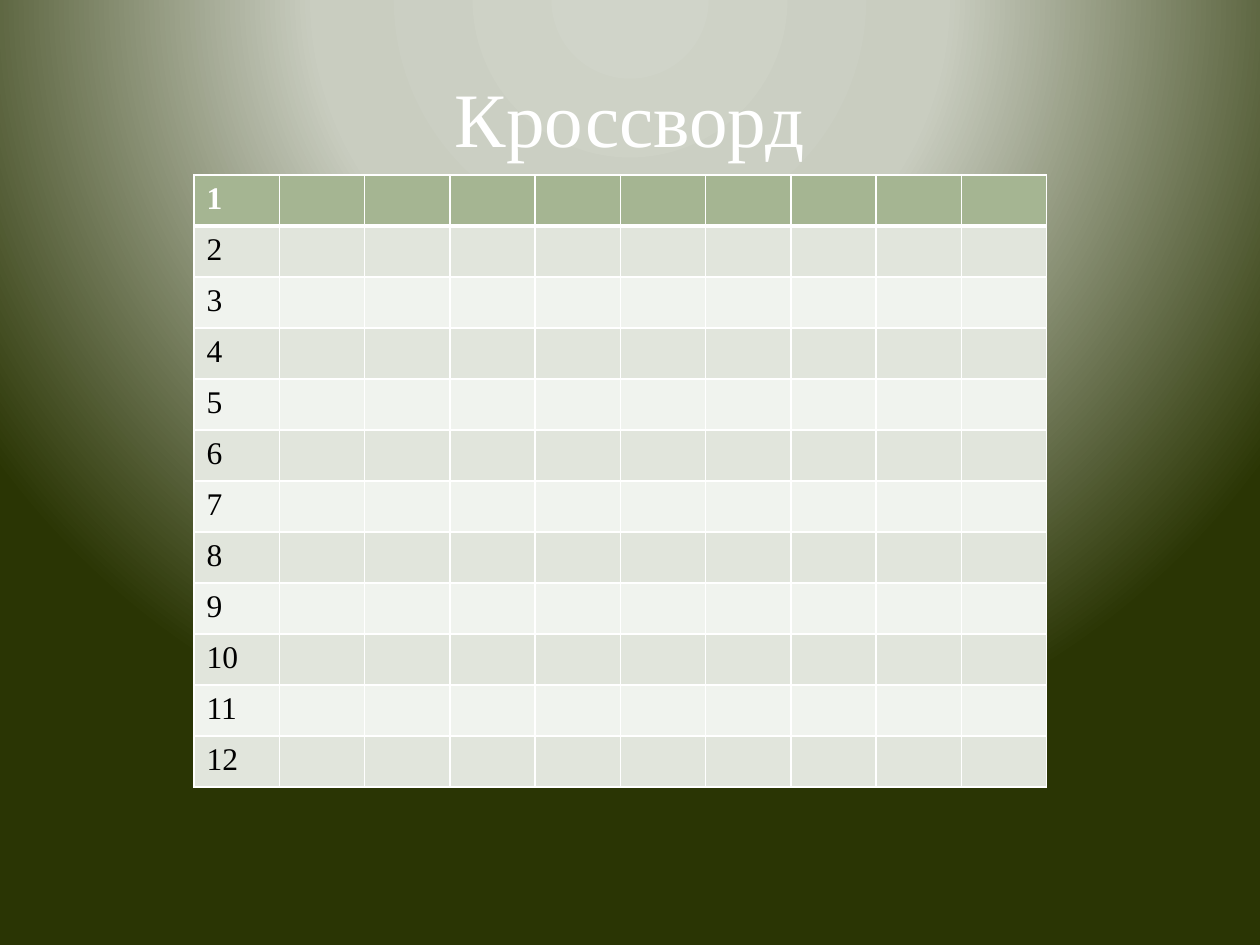
from dataclasses import dataclass

from lxml.etree import SubElement
from pptx import Presentation
from pptx.dml.color import RGBColor as Rgb
from pptx.enum.text import MSO_ANCHOR as Anchor, PP_ALIGN as Align
from pptx.oxml import parse_xml
from pptx.oxml.ns import nsdecls, qn
from pptx.slide import Slide
from pptx.table import _Cell as Cell
from pptx.text.text import _Paragraph as Paragraph
from pptx.util import Emu, Pt

EMU_PER_PX = 914400 / 126


@dataclass(frozen=True)
class Theme:
    font: str = "Times New Roman"
    title_size: int = 44
    cell_size: int = 18
    white: str = "FFFFFF"
    black: str = "000000"
    header: str = "A5B592"
    bands: tuple[str, str] = ("E1E5DC", "F0F3EE")
    backdrop: tuple[tuple[int, str], ...] = (
        (0, "D0D4C9"), (40, "C9CDC0"), (100, "2A3504"))
    thin: int = 1
    thick: int = 3


@dataclass(frozen=True)
class Box:
    left: int
    top: int
    width: int
    height: int

    def emu(self) -> tuple[Emu, ...]:
        return tuple(px(v) for v in (self.left, self.top, self.width, self.height))


@dataclass(frozen=True)
class RowStyle:
    fill: str
    ink: str
    bold: bool
    top: int
    bottom: int


THEME = Theme()
SLIDE = Box(0, 0, 1260, 945)
TITLE = Box(63, 38, 1134, 157)
CROSSWORD = Box(194, 175, 853, 612)
QUESTIONS, LETTERS = 12, 10


def px(value: float) -> Emu:
    return Emu(round(value * EMU_PER_PX))


def paint_backdrop(slide: Slide) -> None:
    """Fill the background with a radial glow centred above the slide."""
    stops = "".join(
        f'<a:gs pos="{pos * 1000}"><a:srgbClr val="{color}"/></a:gs>'
        for pos, color in THEME.backdrop)
    slide.element.cSld.insert(0, parse_xml(
        f'<p:bg {nsdecls("p", "a")}><p:bgPr><a:gradFill rotWithShape="1">'
        f'<a:gsLst>{stops}</a:gsLst><a:path path="circle">'
        '<a:fillToRect l="50000" t="-80000" r="50000" b="180000"/></a:path>'
        '</a:gradFill><a:effectLst/></p:bgPr></p:bg>'))


def add_run(paragraph: Paragraph, text: str, size: int, color: str,
            bold: bool = False) -> None:
    run = paragraph.add_run()
    run.text = text
    run.font.name = THEME.font
    run.font.size = Pt(size)
    run.font.bold = bold
    run.font.color.rgb = Rgb.from_string(color)


def add_title(slide: Slide, text: str) -> None:
    frame = slide.shapes.add_textbox(*TITLE.emu()).text_frame
    frame.word_wrap = True
    frame.vertical_anchor = Anchor.MIDDLE
    heading = frame.paragraphs[0]
    heading.alignment = Align.CENTER
    add_run(heading, text, THEME.title_size, THEME.white)


def row_style(row: int) -> RowStyle:
    if row == 0:
        return RowStyle(THEME.header, THEME.white, True, THEME.thin, THEME.thick)
    top = THEME.thick if row == 1 else THEME.thin
    return RowStyle(THEME.bands[(row - 1) % 2], THEME.black, False, top, THEME.thin)


def style_cell(cell: Cell, style: RowStyle) -> None:
    cell.fill.solid()
    cell.fill.fore_color.rgb = Rgb.from_string(style.fill)
    properties = cell._tc.get_or_add_tcPr()
    edges = {"L": THEME.thin, "R": THEME.thin, "T": style.top, "B": style.bottom}
    # Borders have to stand before the fill in the cell properties.
    for place, (side, width) in enumerate(edges.items()):
        edge = SubElement(properties, qn(f"a:ln{side}"), w=str(Pt(width)))
        ink = SubElement(edge, qn("a:solidFill"))
        SubElement(ink, qn("a:srgbClr"), val=THEME.white)
        properties.insert(place, edge)


def add_crossword(slide: Slide) -> None:
    grid = slide.shapes.add_table(QUESTIONS, LETTERS, *CROSSWORD.emu()).table
    grid.first_row = grid.horz_banding = False
    for column in grid.columns:
        column.width = px(CROSSWORD.width / LETTERS)
    for number, row in enumerate(grid.rows):
        row.height = px(CROSSWORD.height / QUESTIONS)
        style = row_style(number)
        for cell in row.cells:
            style_cell(cell, style)
        add_run(row.cells[0].text_frame.paragraphs[0], str(number + 1),
                THEME.cell_size, style.ink, style.bold)


def main() -> None:
    deck = Presentation()
    deck.slide_width, deck.slide_height = px(SLIDE.width), px(SLIDE.height)
    slide = deck.slides.add_slide(deck.slide_layouts[6])
    paint_backdrop(slide)
    add_title(slide, "Кроссворд")
    add_crossword(slide)
    deck.save("out.pptx")


if __name__ == "__main__":
    main()
